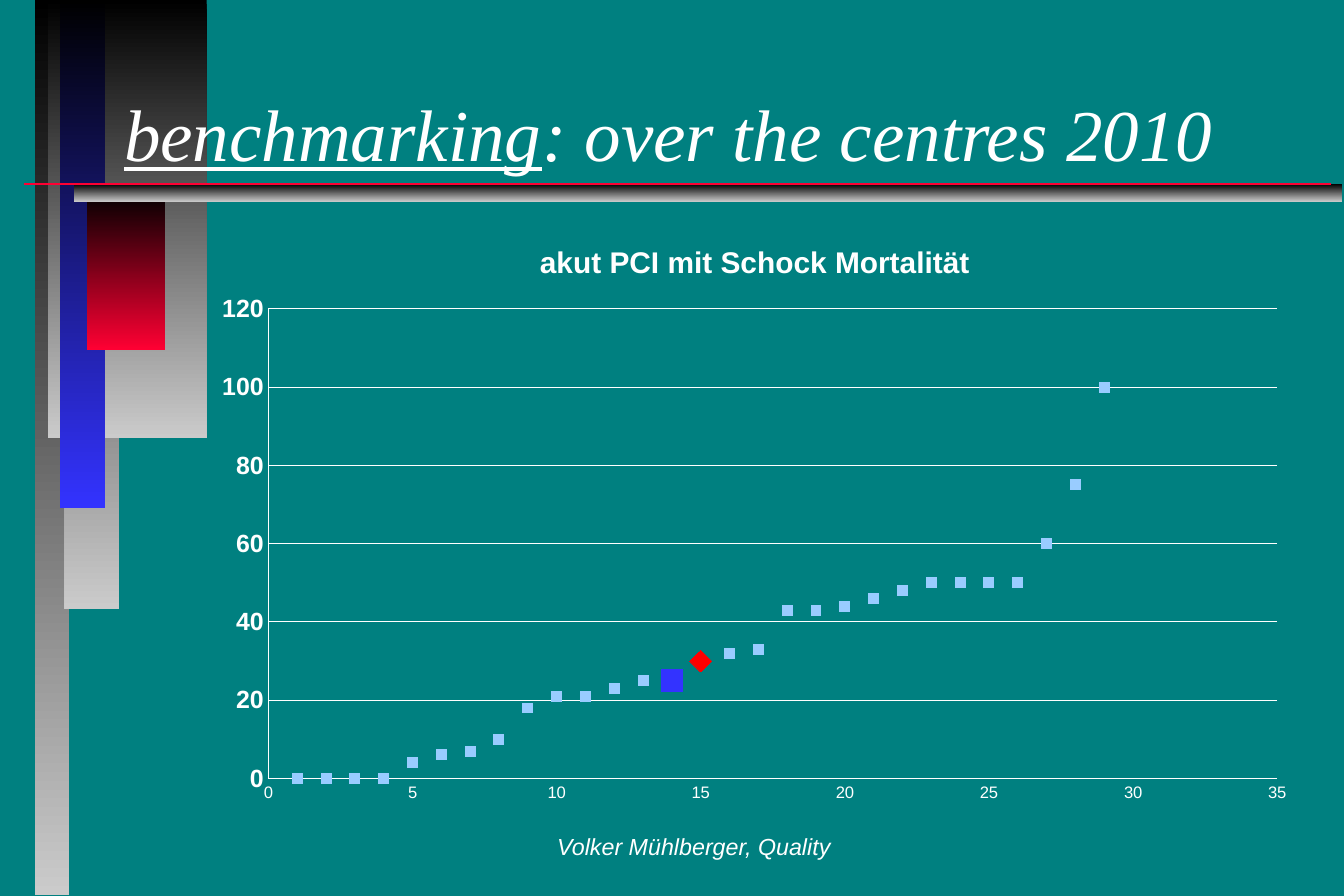
import pptx
import pptx.chart.data
import pptx.dml.color
import pptx.enum.chart
import pptx.enum.shapes
import pptx.enum.text
import pptx.oxml
import pptx.oxml.ns
import pptx.util

WHITE, BLACK, GREY = "FFFFFF", "000000", "CBCBCB"
TEAL, BLUE, ROSE, RED, PALE = "008080", "3333FF", "FF0033", "FF0000", "99CCFF"
MARK = pptx.enum.chart.XL_MARKER_STYLE
ALIGN = pptx.enum.text.PP_ALIGN
ANCHOR = pptx.enum.text.MSO_ANCHOR


def px(num):
    return pptx.util.Emu(num * 9144)


def hue(code):
    return pptx.dml.color.RGBColor.from_string(code)


class Deck:
    """Draws the elements of the current slide in one style."""

    def __init__(self, wide, high, back):
        self.prs = pptx.Presentation()
        self.prs.slide_width, self.prs.slide_height = px(wide), px(high)
        self.slide = self.prs.slides.add_slide(self.prs.slide_layouts[6])
        self.shapes = self.slide.shapes
        self.paint(self.slide.background.fill, back)

    def paint(self, fill, code):
        fill.solid()
        fill.fore_color.rgb = hue(code)

    def font(self, font, size, bold=False, italic=False, face="Arial"):
        font.name, font.size = face, pptx.util.Pt(size)
        font.bold, font.italic = bold, italic
        font.color.rgb = hue(WHITE)

    def bar(self, box, code):
        kind = pptx.enum.shapes.MSO_SHAPE.RECTANGLE
        shape = self.shapes.add_shape(kind, *map(px, box))
        shape.shadow.inherit = False
        shape.line.fill.background()
        shape.fill.gradient()
        shape.fill.gradient_angle = 270
        for stop, tone in zip(shape.fill.gradient_stops, (BLACK, code)):
            stop.color.rgb = hue(tone)

    def rule(self, ends, code):
        kind = pptx.enum.shapes.MSO_CONNECTOR.STRAIGHT
        line = self.shapes.add_connector(kind, *map(px, ends))
        line.line.color.rgb = hue(code)
        line.line.width = pptx.util.Pt(1)
        line._element.spPr.append(pptx.oxml.parse_xml(
            f"<a:effectLst {pptx.oxml.ns.nsdecls('a')}/>"))

    def text(self, box, parts, size, face, align, anchor, wrap):
        frame = self.shapes.add_textbox(*map(px, box)).text_frame
        frame.word_wrap, frame.vertical_anchor = wrap, anchor
        para = frame.paragraphs[0]
        para.alignment = align
        for part, under in parts:
            run = para.add_run()
            run.text = part
            self.font(run.font, size, italic=True, face=face)
            run.font.underline = under

    def place(self, node, index, **spots):
        for old in node.xpath("./c:layout"):
            node.remove(old)
        modes = "".join(f'<c:{key}Mode val="edge"/>' for key in "xy")
        sizes = "".join(f'<c:{key} val="{val}"/>' for key, val in spots.items())
        inner = '<c:layoutTarget val="inner"/>' if "w" in spots else ""
        node.insert(index, pptx.oxml.parse_xml(
            f"<c:layout {pptx.oxml.ns.nsdecls('c')}><c:manualLayout>"
            f"{inner}{modes}{sizes}</c:manualLayout></c:layout>"))

    def axis(self, axis, top, step, size, bold, grid):
        axis.minimum_scale, axis.maximum_scale, axis.major_unit = 0, top, step
        axis.major_tick_mark = axis.minor_tick_mark = pptx.enum.chart.XL_TICK_MARK.NONE
        axis.has_major_gridlines = grid
        axis.format.line.color.rgb = hue(WHITE)
        if grid:
            axis.major_gridlines.format.line.color.rgb = hue(WHITE)
        self.font(axis.tick_labels.font, size, bold)

    def mark(self, mark, style, size, code):
        mark.style, mark.size = style, size
        self.paint(mark.format.fill, code)
        mark.format.line.fill.background()

    def plot(self, box, title, rates, picks):
        data = pptx.chart.data.XyChartData()
        points = data.add_series("Series 1")
        for rank, rate in enumerate(rates, 1):
            points.add_data_point(rank, rate)
        kind = pptx.enum.chart.XL_CHART_TYPE.XY_SCATTER
        chart = self.shapes.add_chart(kind, *map(px, box), data).chart
        chart.has_legend = False
        self.font(chart.font, 10)
        chart.has_title = True
        head = chart.chart_title
        head.text_frame.text = title
        self.font(head.text_frame.paragraphs[0].runs[0].font, 18, True)
        self.place(head._element, 1, x=0.3, y=0.04)
        area = chart.element.xpath(".//c:plotArea")[0]
        self.place(area, 0, x=0.06, y=0.16, w=0.91, h=0.78)
        self.axis(chart.category_axis, 35, 5, 10, False, False)
        self.axis(chart.value_axis, 120, 20, 15, True, True)
        chart.plots[0].vary_by_categories = False
        series = chart.plots[0].series[0]
        series.smooth = False
        series.format.line.fill.background()
        self.mark(series.marker, MARK.SQUARE, 6, PALE)
        for rank, style, code in picks:
            self.mark(series.points[rank - 1].marker, style, 13, code)


def main():
    deck = Deck(1125, 750, TEAL)
    bars = [
        ((29, 0, 29, 749), GREY),
        ((54, 0, 46, 510), GREY),
        ((40, 0, 133, 367), GREY),
        ((50, 0, 38, 425), BLUE),
        ((73, 160, 65, 133), ROSE),
        ((62, 154, 1061, 15), GREY),
    ]
    for box, code in bars:
        deck.bar(box, code)
    deck.rule((20, 154, 1114, 154), ROSE)
    deck.text((94, 25, 956, 127),
              [("benchmarking", True), (": over the centres 2010", False)],
              44, "Times New Roman", ALIGN.LEFT, ANCHOR.BOTTOM, True)
    deck.text((403, 683, 356, 50), [("Volker Mühlberger, Quality", False)],
              14, "Arial", ALIGN.CENTER, ANCHOR.MIDDLE, False)
    rates = [0, 0, 0, 0, 4, 6, 7, 10, 18, 21, 21, 23, 25, 25, 30, 32, 33, 43,
             43, 44, 46, 48, 50, 50, 50, 50, 60, 75, 100]
    picks = [(14, MARK.SQUARE, BLUE), (15, MARK.DIAMOND, RED)]
    deck.plot((169, 178, 928, 504), "akut PCI mit Schock Mortalität", rates, picks)
    deck.prs.save("out.pptx")


if __name__ == "__main__":
    main()
